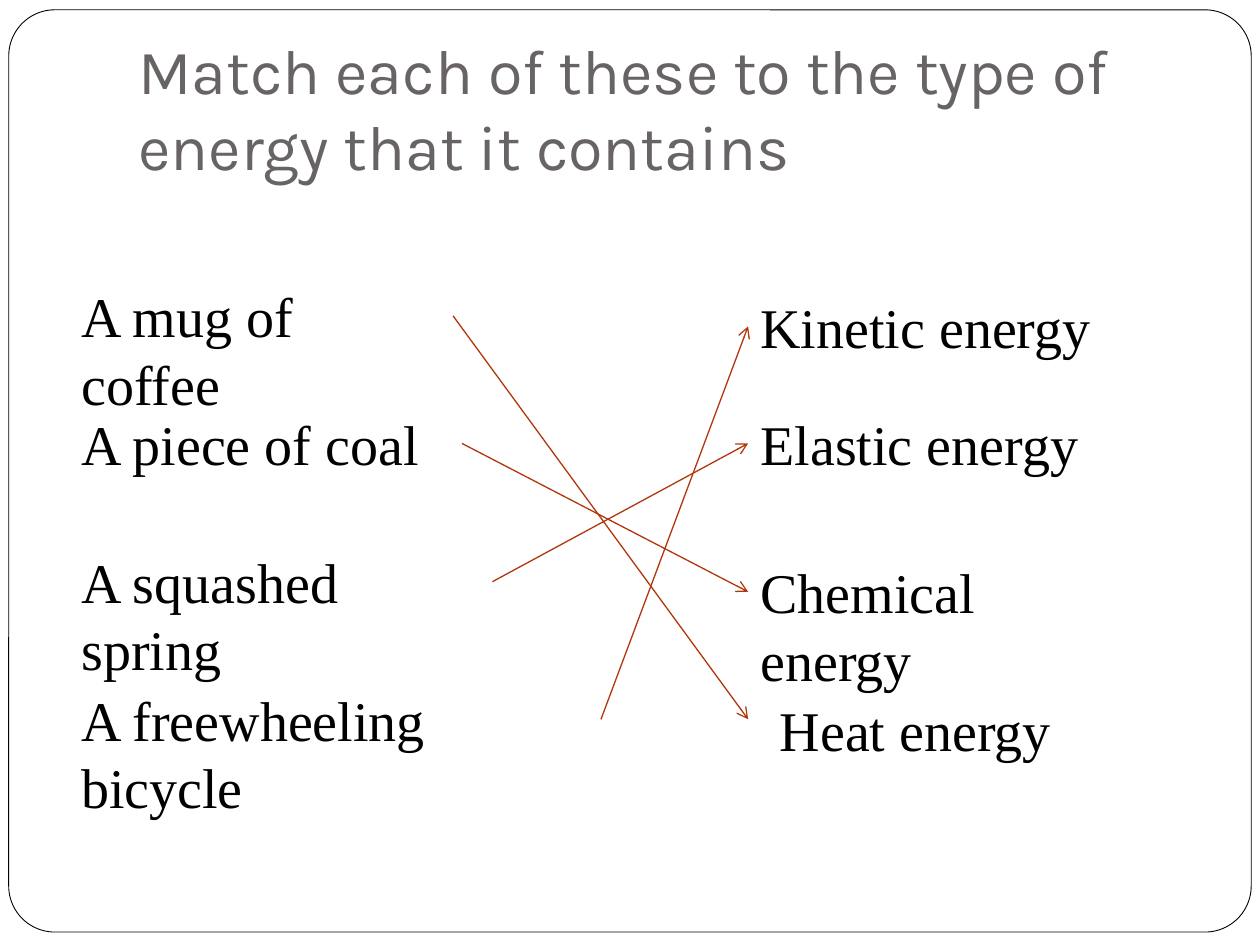
"""Build a matching exercise that links objects to the energy they contain."""
from dataclasses import dataclass

from lxml import etree
from pptx import Presentation
from pptx.dml.color import RGBColor
from pptx.enum import shapes, text
from pptx.oxml.ns import qn
from pptx.util import Pt


@dataclass(frozen=True)
class Theme:
    paper: RGBColor = RGBColor(0xFF, 0xFF, 0xFF)
    ink: RGBColor = RGBColor(0, 0, 0)
    title: RGBColor = RGBColor(0x69, 0x64, 0x64)
    arrow: RGBColor = RGBColor(0xB1, 0x36, 0x0B)
    title_font: str = "Karla"
    body_font: str = "Times New Roman"
    title_size: int = 36
    body_size: int = 32


theme = Theme()


def write(shape, words, font, size, color):
    frame = shape.text_frame
    frame.word_wrap = True
    frame.text = words
    style = frame.paragraphs[0].runs[0].font
    style.name, style.size, style.color.rgb = font, Pt(size), color


presentation = Presentation()
presentation.slide_width, presentation.slide_height = Pt(720), Pt(540)
slide = presentation.slides.add_slide(presentation.slide_layouts[5])

title = slide.shapes.title
title.left, title.top, title.width, title.height = Pt(72), Pt(21.6), Pt(612), Pt(90)
write(title, "Match each of these to the type of energy that it contains",
      theme.title_font, theme.title_size, theme.title)
title.text_frame.auto_size = text.MSO_AUTO_SIZE.NONE
title.text_frame.vertical_anchor = text.MSO_ANCHOR.BOTTOM
title.text_frame.margin_bottom = Pt(7.2)
title.text_frame.paragraphs[0].alignment = text.PP_ALIGN.LEFT

border = slide.shapes.add_shape(
    shapes.MSO_SHAPE.ROUNDED_RECTANGLE, Pt(5), Pt(5.6), Pt(710), Pt(527))
border.adjustments[0] = 0.05
border.shadow.inherit = False
border.fill.solid()
border.fill.fore_color.rgb = theme.paper
border.line.color.rgb = theme.ink
border.line.width = Pt(0.5)
title.element.addprevious(border.element)

label_height = 46
object_left, energy_left, energy_width = 39.4, 427.5, 219.5
objects = [
    ("A mug of coffee", 157.5, 219.5, "Heat energy"),
    ("A piece of coal", 230.4, 224.6, "Chemical energy"),
    ("A squashed spring", 309.4, 242, "Elastic energy"),
    ("A freewheeling bicycle", 388.1, 304, "Kinetic energy"),
]
energies = {
    "Heat energy": (438.5, 394),
    "Chemical energy": (energy_left, 315.2),
    "Elastic energy": (energy_left, 230.4),
    "Kinetic energy": (energy_left, 163.5),
}

labels = [(words, object_left, top, width) for words, top, width, _ in objects]
labels += [(words, left, top, energy_width) for words, (left, top) in energies.items()]
for words, left, top, width in labels:
    label = slide.shapes.add_textbox(Pt(left), Pt(top), Pt(width), Pt(label_height))
    write(label, words, theme.body_font, theme.body_size, theme.ink)
    label.text_frame.auto_size = text.MSO_AUTO_SIZE.SHAPE_TO_FIT_TEXT

for words, top, width, energy in objects:
    start_y = top + label_height / 2
    end_y = energies[energy][1] + label_height / 2
    if energy == "Heat energy":
        end_y -= 6
    arrow = slide.shapes.add_connector(
        shapes.MSO_CONNECTOR.STRAIGHT,
        Pt(object_left + width), Pt(start_y), Pt(energy_left), Pt(end_y))
    arrow.line.color.rgb = theme.arrow
    arrow.line.width = Pt(0.75)
    etree.SubElement(arrow.line._get_or_add_ln(), qn("a:tailEnd"), type="arrow")
    etree.SubElement(arrow.element.spPr, qn("a:effectLst"))

presentation.save("out.pptx")
